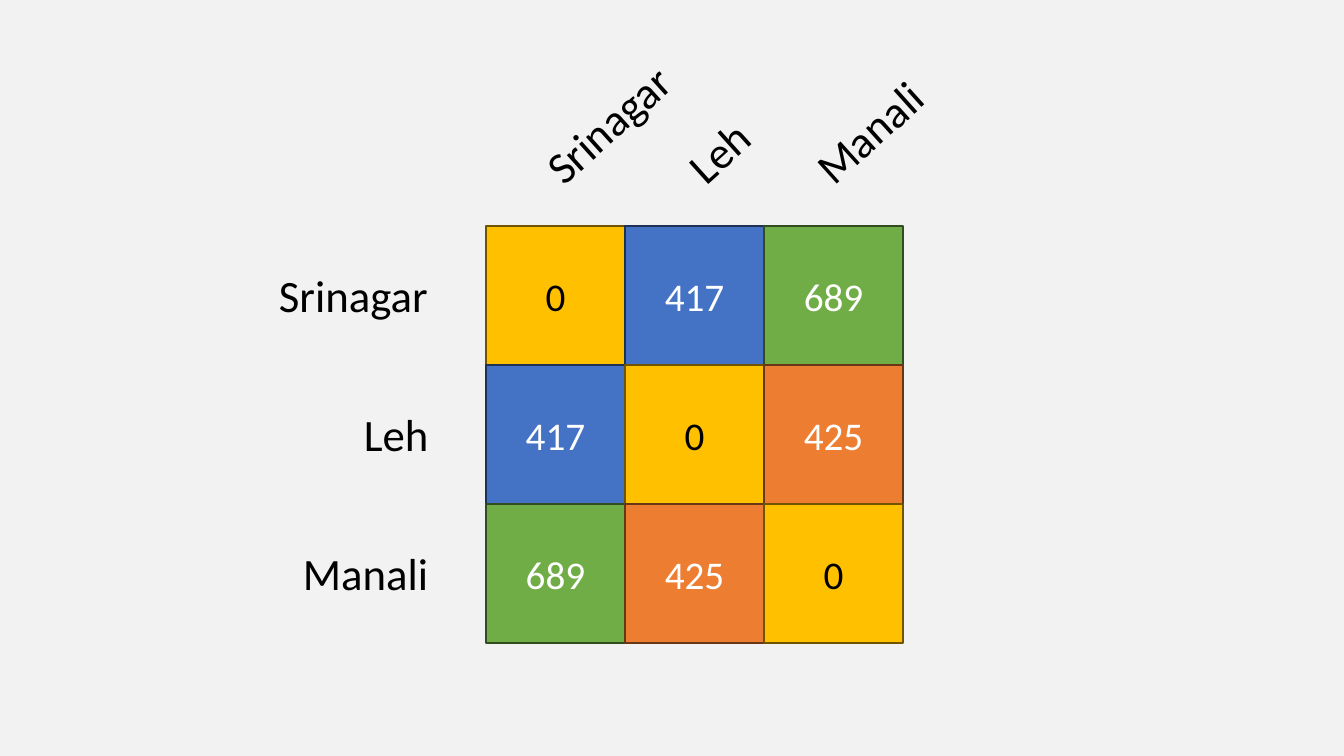
from pptx import Presentation
from pptx.dml.color import RGBColor
from pptx.enum.shapes import MSO_SHAPE
from pptx.enum.text import MSO_ANCHOR, MSO_AUTO_SIZE, PP_ALIGN
from pptx.util import Emu, Pt

RECTANGLE = MSO_SHAPE.RECTANGLE
MIDDLE = MSO_ANCHOR.MIDDLE
CENTER = PP_ALIGN.CENTER
LEFT = PP_ALIGN.LEFT
FIT_SHAPE = MSO_AUTO_SIZE.SHAPE_TO_FIT_TEXT

BACKGROUND = RGBColor(0xF2, 0xF2, 0xF2)
BLACK = RGBColor(0x00, 0x00, 0x00)
WHITE = RGBColor(0xFF, 0xFF, 0xFF)
GOLD = RGBColor(0xFF, 0xC0, 0x00)
GOLD_EDGE = RGBColor(0x70, 0x54, 0x00)
BLUE = RGBColor(0x44, 0x72, 0xC4)
BLUE_EDGE = RGBColor(0x1E, 0x32, 0x56)
GREEN = RGBColor(0x70, 0xAD, 0x47)
GREEN_EDGE = RGBColor(0x31, 0x4C, 0x1F)
ORANGE = RGBColor(0xED, 0x7D, 0x31)
ORANGE_EDGE = RGBColor(0x68, 0x37, 0x15)

SLIDE_WIDTH, SLIDE_HEIGHT = 1344, 756
EMU_PER_PX = 12192000 / SLIDE_WIDTH
GRID_LEFT, GRID_TOP, CELL = 486, 226, 139
LABEL_HEIGHT = 64
ROW_LABEL_RIGHT = 440
COLUMN_LABEL_ANGLE = 317.9

DISTANCES = [[0, 417, 689], [417, 0, 425], [689, 425, 0]]
DISTANCE_COLORS = {
    0: (GOLD, GOLD_EDGE, BLACK),
    417: (BLUE, BLUE_EDGE, WHITE),
    689: (GREEN, GREEN_EDGE, WHITE),
    425: (ORANGE, ORANGE_EDGE, WHITE),
}
CITIES = [
    ("Srinagar", 171, (523, 91)),
    ("Leh", 86, (676, 119)),
    ("Manali", 147, (796, 99)),
]


def px(length):
    return Emu(round(length * EMU_PER_PX))


def write(frame, text, size, color, alignment):
    paragraph = frame.paragraphs[0]
    paragraph.alignment = alignment
    run = paragraph.add_run()
    run.text = text
    run.font.color.rgb = color
    for name, value in {"name": "Calibri", "size": Pt(size)}.items():
        setattr(run.font, name, value)


def add_distance(slide, row, column, distance):
    fill, edge, ink = DISTANCE_COLORS[distance]
    cell = slide.shapes.add_shape(
        RECTANGLE, px(GRID_LEFT + column * CELL), px(GRID_TOP + row * CELL),
        px(CELL), px(CELL))
    cell.shadow.inherit = False
    cell.fill.solid()
    cell.fill.fore_color.rgb = fill
    cell.line.color.rgb = edge
    cell.line.width = Pt(1)
    cell.text_frame.vertical_anchor = MIDDLE
    write(cell.text_frame, str(distance), 28, ink, CENTER)


def add_city(slide, city, left, top, width, angle=0):
    label = slide.shapes.add_textbox(px(left), px(top), px(width), px(LABEL_HEIGHT))
    label.rotation = angle
    for name, value in {"word_wrap": False, "auto_size": FIT_SHAPE}.items():
        setattr(label.text_frame, name, value)
    write(label.text_frame, city, 32, BLACK, LEFT)


def main():
    deck = Presentation()
    deck.slide_width = px(SLIDE_WIDTH)
    deck.slide_height = px(SLIDE_HEIGHT)
    slide = deck.slides.add_slide(deck.slide_layouts[6])
    slide.background.fill.solid()
    slide.background.fill.fore_color.rgb = BACKGROUND

    for city, width, (left, top) in CITIES:
        add_city(slide, city, left, top, width, COLUMN_LABEL_ANGLE)
    for row, (city, width, _) in enumerate(CITIES):
        row_top = GRID_TOP + row * CELL + (CELL - LABEL_HEIGHT) // 2
        add_city(slide, city, ROW_LABEL_RIGHT - width, row_top, width)
    for row, distances in enumerate(DISTANCES):
        for column, distance in enumerate(distances):
            add_distance(slide, row, column, distance)

    deck.save("out.pptx")


if __name__ == "__main__":
    main()
